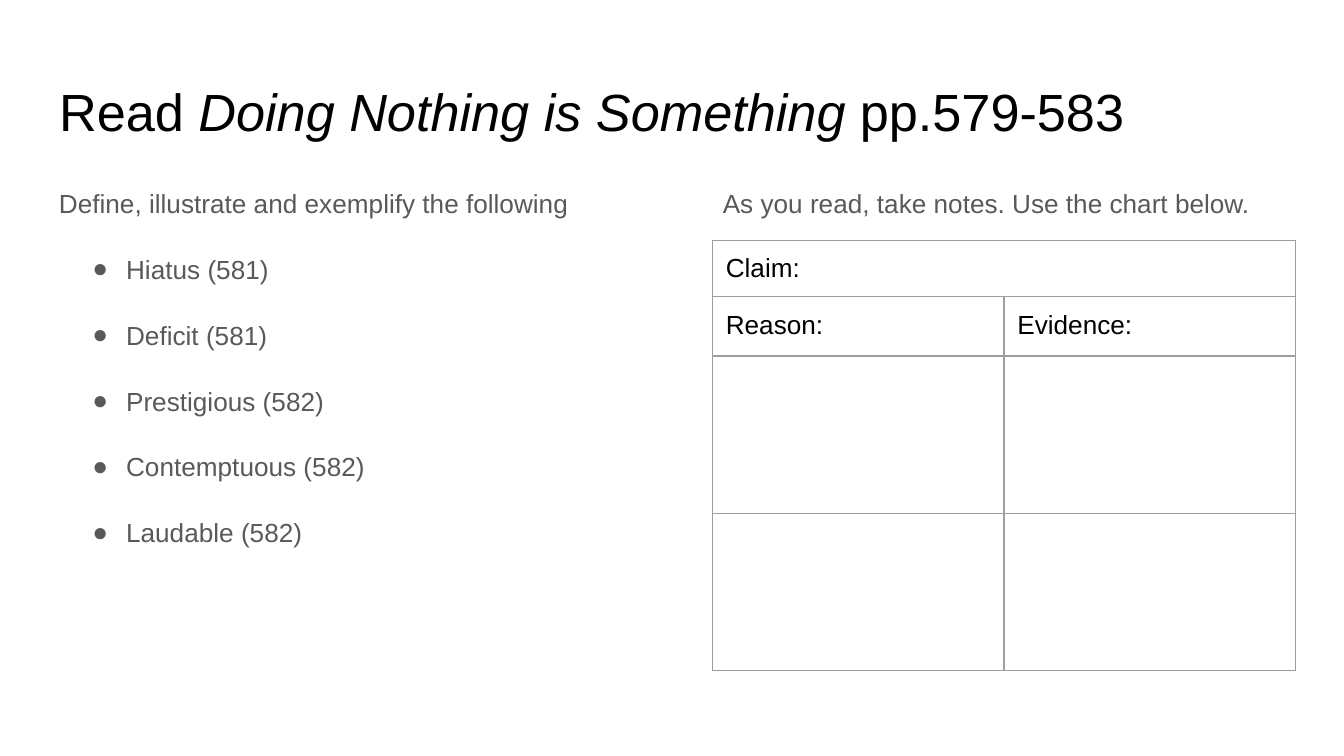
from lxml import etree
from pptx import Presentation
from pptx.dml.color import RGBColor
from pptx.enum.text import MSO_ANCHOR, MSO_AUTO_SIZE, PP_ALIGN
from pptx.oxml.ns import qn
from pptx.util import Inches, Pt

TOP = MSO_ANCHOR.TOP
NO_AUTOFIT = MSO_AUTO_SIZE.NONE
LEFT = PP_ALIGN.LEFT

BLACK = RGBColor(0x00, 0x00, 0x00)
GRAY = RGBColor(0x59, 0x59, 0x59)
BORDER = RGBColor(0x9E, 0x9E, 0x9E)

FONT = "Arial"
PADDING = Inches(0.1)
TITLE_FORMAT = {"name": FONT, "size": Pt(28), "bold": False}
TEXT_FORMAT = {"name": FONT, "size": Pt(14)}
CELL_FORMAT = {
    "vertical_anchor": TOP,
    "margin_left": PADDING, "margin_right": PADDING,
    "margin_top": PADDING, "margin_bottom": PADDING,
}
FRAME_FORMAT = {**CELL_FORMAT, "word_wrap": True, "auto_size": NO_AUTOFIT}
PARA_FORMAT = {"alignment": LEFT, "line_spacing": 1.15,
               "space_before": Pt(0), "space_after": Pt(16)}

TITLE_PARTS = [("Read ", False), ("Doing Nothing is Something ", True),
               ("pp.579-583", False)]
VOCABULARY = ["Hiatus (581)", "Deficit (581)", "Prestigious (582)",
              "Contemptuous (582)", "Laudable (582)"]
NOTE_LABELS = [["Claim:", ""], ["Reason:", "Evidence:"], ["", ""], ["", ""]]
ROW_HEIGHTS = [0.39, 0.44, 1.17, 1.17]


def apply_format(target, values):
    for name, value in values.items():
        setattr(target, name, value)


def add_span(para, text, values, color):
    span = para.add_run()
    span.text = text
    apply_format(span.font, values)
    span.font.color.rgb = color


def add_bullet(para):
    properties = para._p.get_or_add_pPr()
    properties.set("marL", str(Inches(0.5)))
    properties.set("indent", str(Inches(-0.25)))
    color = etree.SubElement(properties, qn("a:buClr"))
    etree.SubElement(color, qn("a:srgbClr"), val=str(GRAY))
    etree.SubElement(properties, qn("a:buFont"), typeface=FONT)
    etree.SubElement(properties, qn("a:buChar"), char="●")


def add_borders(cell):
    properties = cell._tc.get_or_add_tcPr()
    for side in ("lnL", "lnR", "lnT", "lnB"):
        line = etree.SubElement(properties, qn(f"a:{side}"), w=str(Pt(0.75)))
        fill = etree.SubElement(line, qn("a:solidFill"))
        etree.SubElement(fill, qn("a:srgbClr"), val=str(BORDER))


def place_title(page, left, top, width, height):
    title = page.shapes.title
    apply_format(title, {"left": left, "top": top,
                         "width": width, "height": height})
    apply_format(title.text_frame, FRAME_FORMAT)
    para = title.text_frame.paragraphs[0]
    para.alignment = LEFT
    for text, italic in TITLE_PARTS:
        add_span(para, text, {**TITLE_FORMAT, "italic": italic}, BLACK)


def add_column(page, left, top, width, height, heading, items=()):
    """Add a lead sentence followed by optional bulleted items."""
    frame = page.shapes.add_textbox(left, top, width, height).text_frame
    apply_format(frame, FRAME_FORMAT)
    for index, text in enumerate([heading, *items]):
        para = frame.add_paragraph() if index else frame.paragraphs[0]
        apply_format(para, PARA_FORMAT)
        if index:
            add_bullet(para)
        add_span(para, text, TEXT_FORMAT, GRAY)


def add_notes_table(page, left, top, width, height):
    table = page.shapes.add_table(len(NOTE_LABELS), 2, left, top,
                                  width, height).table
    apply_format(table, {"first_row": False, "horz_banding": False})
    for column in table.columns:
        column.width = width // 2
    for row, row_height in zip(table.rows, ROW_HEIGHTS):
        row.height = Inches(row_height)
    table.cell(0, 0).merge(table.cell(0, 1))
    for row, labels in zip(table.rows, NOTE_LABELS):
        for cell, label in zip(row.cells, labels):
            apply_format(cell, CELL_FORMAT)
            add_borders(cell)
            cell.fill.background()
            if label:
                add_span(cell.text_frame.paragraphs[0], label,
                         TEXT_FORMAT, BLACK)


def main():
    deck = Presentation()
    deck.slide_width = Inches(10)
    deck.slide_height = deck.slide_width * 9 // 16
    page = deck.slides.add_slide(deck.slide_layouts[5])

    margin, column_top = Inches(0.34), Inches(1.26)
    column_width, column_height = Inches(4.37), Inches(3.74)
    place_title(page, margin, Inches(0.49),
                deck.slide_width - 2 * margin, Inches(0.63))
    add_column(page, margin, column_top, column_width, column_height,
               "Define, illustrate and exemplify the following", VOCABULARY)
    add_column(page, Inches(5.28), column_top, column_width, column_height,
               "As you read, take notes. Use the chart below.")
    add_notes_table(page, Inches(5.3), Inches(1.79), Inches(4.34),
                    Inches(sum(ROW_HEIGHTS)))
    deck.save("out.pptx")


if __name__ == "__main__":
    main()
